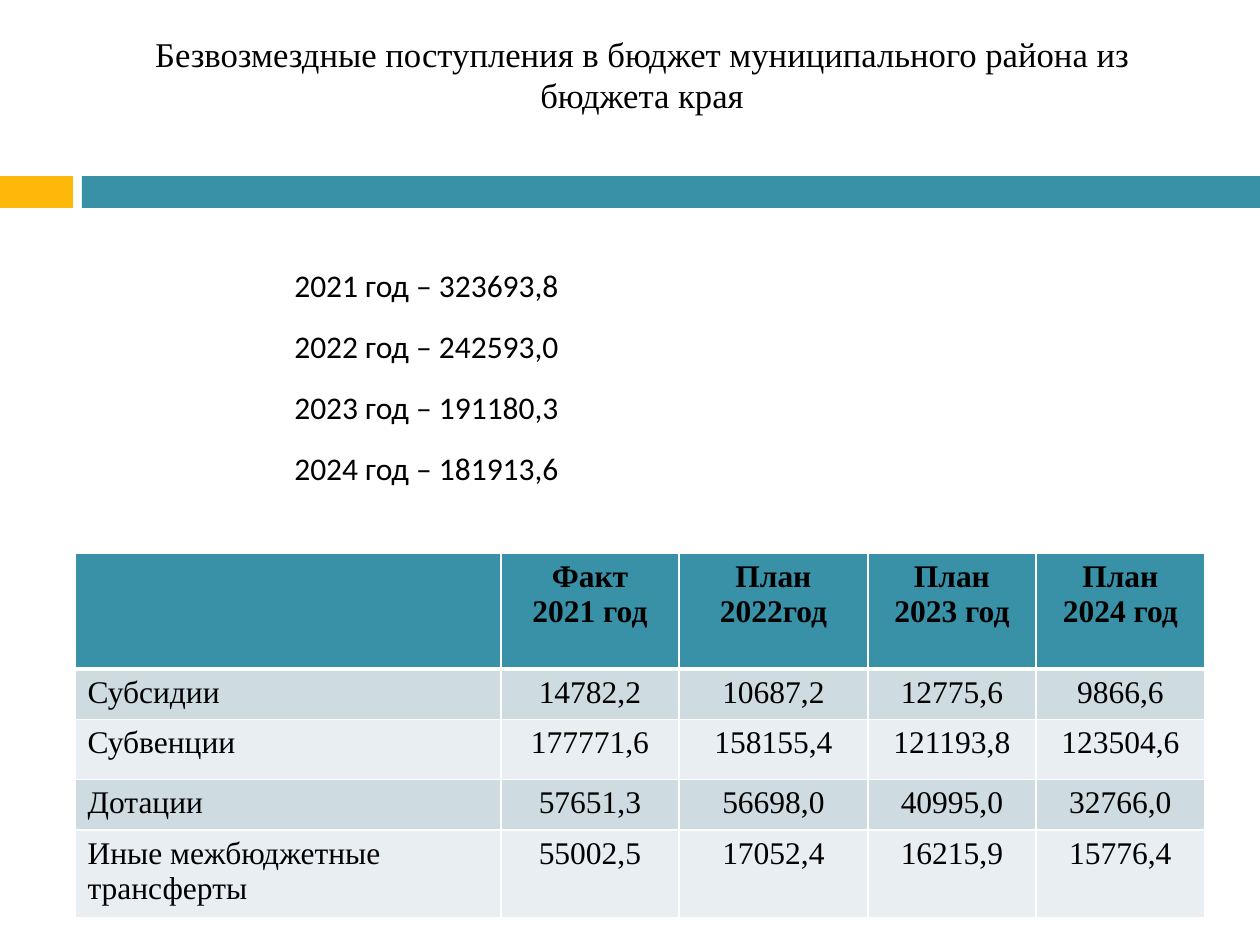
from lxml import etree
from pptx import Presentation
from pptx.dml.color import RGBColor
from pptx.enum.shapes import MSO_SHAPE
from pptx.enum.text import MSO_ANCHOR, PP_ALIGN
from pptx.oxml.ns import qn
from pptx.util import Emu, Pt

RECTANGLE = MSO_SHAPE.RECTANGLE
MIDDLE = MSO_ANCHOR.MIDDLE
CENTER, LEFT = PP_ALIGN.CENTER, PP_ALIGN.LEFT

PX_PER_INCH = 126
THEME = {
    "accent": "FEB80A", "main": "3891A7", "text": "000000", "border": "FFFFFF",
    "bands": ["CEDCE1", "E8EEF1"],
    "serif": "Times New Roman", "sans": "Calibri",
    "title_size": 19.8, "body_size": 18,
}


def px(length):
    return Emu(round(length * 914400 / PX_PER_INCH))


def style(para, font_name, size, align=LEFT, bold=False):
    para.alignment = align
    for span in para.runs:
        span.font.name = font_name
        span.font.size = Pt(size)
        span.font.bold = bold
        span.font.color.rgb = RGBColor.from_string(THEME["text"])


deck = Presentation()
deck.slide_width, deck.slide_height = px(1260), px(945)
page = deck.slides.add_slide(deck.slide_layouts[6])

# Two-colour band under the title
for left, width, color in [(0, 73, THEME["accent"]), (82, 1178, THEME["main"])]:
    bar = page.shapes.add_shape(RECTANGLE, px(left), px(176), px(width), px(32))
    bar.shadow.inherit = False
    bar.fill.solid()
    bar.fill.fore_color.rgb = RGBColor.from_string(color)
    bar.line.fill.background()

# Title
title = page.shapes.add_textbox(px(80), px(32), px(1124), px(84)).text_frame
title.word_wrap = True
title.vertical_anchor = MIDDLE
title.text = "Безвозмездные поступления в бюджет муниципального района из бюджета края"
style(title.paragraphs[0], THEME["serif"], THEME["title_size"], CENTER)

# Yearly totals
totals = page.shapes.add_textbox(px(282), px(254), px(630), px(302)).text_frame
totals.word_wrap = True
totals.text = "\n".join([
    "2021 год – 323693,8",
    "2022 год – 242593,0",
    "2023 год – 191180,3",
    "2024 год – 181913,6",
])
for para in totals.paragraphs:
    para.line_spacing = 1.15
    para.space_after = Pt(10)
    style(para, THEME["sans"], THEME["body_size"])

# Table of transfers by kind
rows = [
    ["", "Факт\n2021 год", "План\n2022год", "План\n2023 год", "План\n2024 год"],
    ["Субсидии", "14782,2", "10687,2", "12775,6", "9866,6"],
    ["Субвенции", "177771,6", "158155,4", "121193,8", "123504,6"],
    ["Дотации", "57651,3", "56698,0", "40995,0", "32766,0"],
    ["Иные межбюджетные трансферты", "55002,5", "17052,4", "16215,9", "15776,4"],
]
column_widths = [426, 178, 189, 168, 169]
row_heights = [116, 50, 60, 50, 88]
table = page.shapes.add_table(
    len(rows), len(column_widths), px(75), px(553),
    px(sum(column_widths)), px(sum(row_heights))).table
for column, width in zip(table.columns, column_widths):
    column.width = px(width)
for row, height in zip(table.rows, row_heights):
    row.height = px(height)

for r, values in enumerate(rows):
    is_header = r == 0
    fill_color = THEME["main"] if is_header else THEME["bands"][(r - 1) % 2]
    for c, value in enumerate(values):
        cell = table.cell(r, c)
        cell.text_frame.text = value
        for para in cell.text_frame.paragraphs:
            style(para, THEME["serif"], THEME["body_size"], CENTER if c else LEFT, is_header)

        # Borders come before the fill in the cell properties
        properties = cell._tc.get_or_add_tcPr()
        thick_side = {0: "lnB", 1: "lnT"}.get(r)
        for side in ["lnL", "lnR", "lnT", "lnB"]:
            weight = Pt(3 if side == thick_side else 1)
            border = etree.SubElement(properties, qn(f"a:{side}"), w=str(weight))
            border_fill = etree.SubElement(border, qn("a:solidFill"))
            etree.SubElement(border_fill, qn("a:srgbClr"), val=THEME["border"])
        cell.fill.solid()
        cell.fill.fore_color.rgb = RGBColor.from_string(fill_color)

deck.save("out.pptx")
